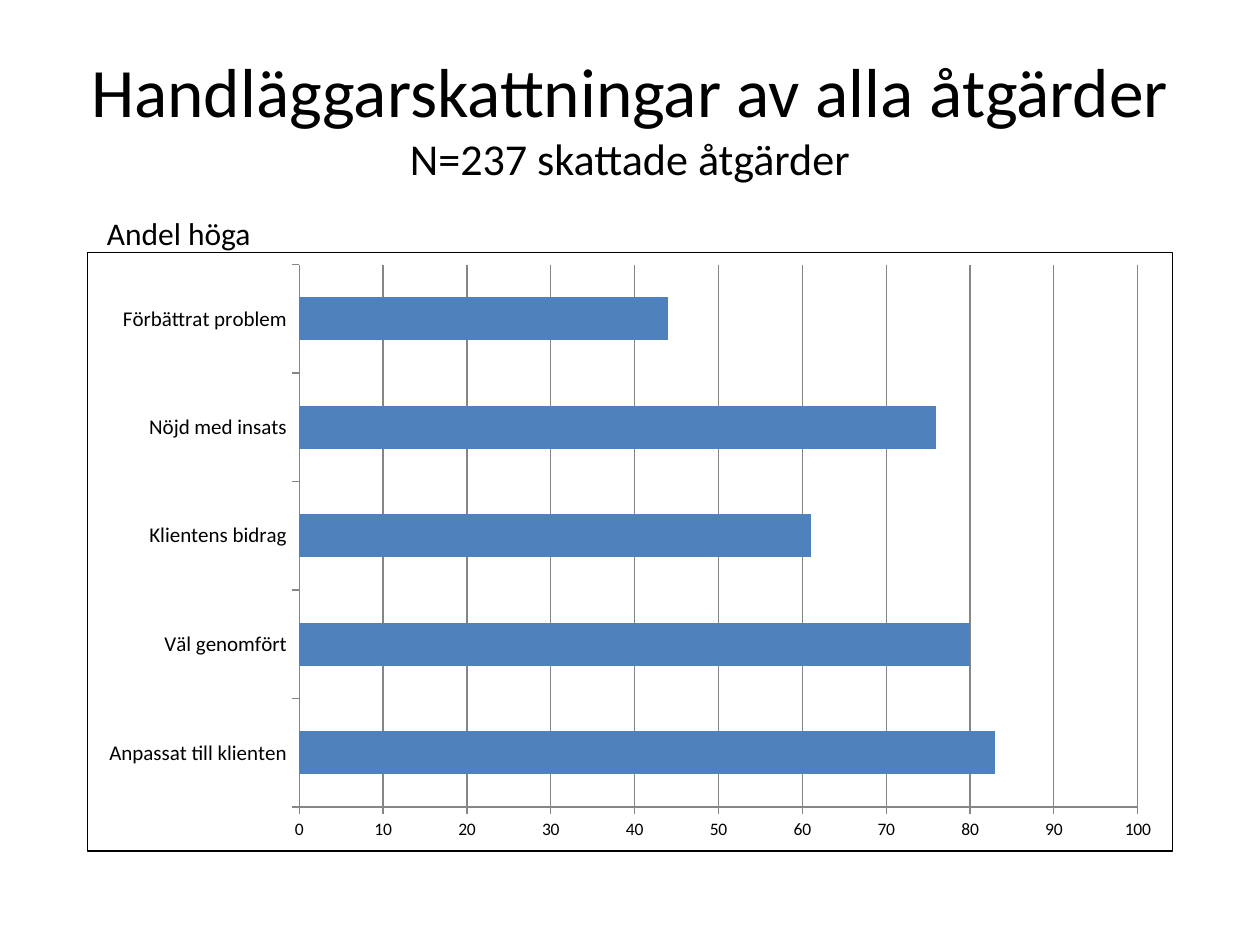
"""Build a slide with a bar chart of the share of high case worker ratings."""
from typing import NamedTuple

from pptx import Presentation
from pptx.chart.data import CategoryChartData
from pptx.dml.color import RGBColor
from pptx.enum.chart import XL_CHART_TYPE, XL_TICK_MARK
from pptx.enum.text import MSO_ANCHOR, PP_ALIGN
from pptx.oxml import parse_xml
from pptx.oxml.ns import nsdecls
from pptx.util import Inches, Pt

FONT = "Calibri"
BLACK = RGBColor(0x00, 0x00, 0x00)
GRAY = RGBColor(0x86, 0x86, 0x86)
BLUE = RGBColor(0x4F, 0x81, 0xBD)


class Line(NamedTuple):
    text: str
    size: float


class Rating(NamedTuple):
    name: str
    share: int


RATINGS = [
    Rating("Anpassat till klienten", 83),
    Rating("Väl genomfört", 80),
    Rating("Klientens bidrag", 61),
    Rating("Nöjd med insats", 76),
    Rating("Förbättrat problem", 44),
]


def add_text(page, lines: list[Line], left: float, top: float, width: float,
             height: float, *, align=PP_ALIGN.LEFT, anchor=MSO_ANCHOR.TOP,
             wrap: bool = True) -> None:
    box = page.shapes.add_textbox(Inches(left), Inches(top), Inches(width), Inches(height))
    frame = box.text_frame
    frame.word_wrap = wrap
    frame.vertical_anchor = anchor
    para = frame.paragraphs[0]
    para.alignment = align
    for index, line in enumerate(lines):
        if index:
            para.add_line_break()
        span = para.add_run()
        span.text = line.text
        span.font.name = FONT
        span.font.size = Pt(line.size)
        span.font.color.rgb = BLACK


def add_border(chart, color: RGBColor, width: float) -> None:
    border = parse_xml(
        f'<c:spPr {nsdecls("c", "a")}><a:noFill/><a:ln w="{Pt(width)}"><a:solidFill>'
        f'<a:srgbClr val="{color}"/></a:solidFill></a:ln></c:spPr>')
    chart.element.chart.addnext(border)


def style_axis(axis, size: float) -> None:
    axis.major_tick_mark = XL_TICK_MARK.OUTSIDE
    axis.minor_tick_mark = XL_TICK_MARK.NONE
    axis.format.line.color.rgb = GRAY
    axis.tick_labels.font.size = Pt(size)


def add_rating_chart(page, ratings: list[Rating]) -> None:
    data = CategoryChartData()
    data.categories = [rating.name for rating in ratings]
    data.add_series("Series 1", [rating.share for rating in ratings])
    chart = page.shapes.add_chart(XL_CHART_TYPE.BAR_CLUSTERED, Inches(0.69), Inches(2),
                                  Inches(8.62), Inches(4.76), data).chart
    chart.has_title = False
    chart.has_legend = False
    chart.font.name = FONT
    chart.font.size = Pt(10)
    chart.font.color.rgb = BLACK
    add_border(chart, BLACK, 0.75)

    plot = chart.plots[0]
    plot.gap_width = 150
    plot.vary_by_categories = False
    fill = plot.series[0].format.fill
    fill.solid()
    fill.fore_color.rgb = BLUE

    style_axis(chart.category_axis, 12)
    shares = chart.value_axis
    style_axis(shares, 10)
    shares.minimum_scale = 0
    shares.maximum_scale = 100
    shares.major_unit = 10
    shares.has_major_gridlines = True
    shares.major_gridlines.format.line.color.rgb = GRAY


def main() -> None:
    deck = Presentation()
    deck.slide_width = Inches(10)
    deck.slide_height = Inches(7.5)
    page = deck.slides.add_slide(deck.slide_layouts[6])
    title = [Line("Handläggarskattningar av alla åtgärder", 39.6),
             Line("N=237 skattade åtgärder", 25.2)]
    add_text(page, title, 0.5, 0.3, 9, 1.25, align=PP_ALIGN.CENTER, anchor=MSO_ANCHOR.MIDDLE)
    add_rating_chart(page, RATINGS)
    add_text(page, [Line("Andel höga", 18)], 0.75, 1.65, 1.36, 0.4, wrap=False)
    deck.save("out.pptx")


if __name__ == "__main__":
    main()
